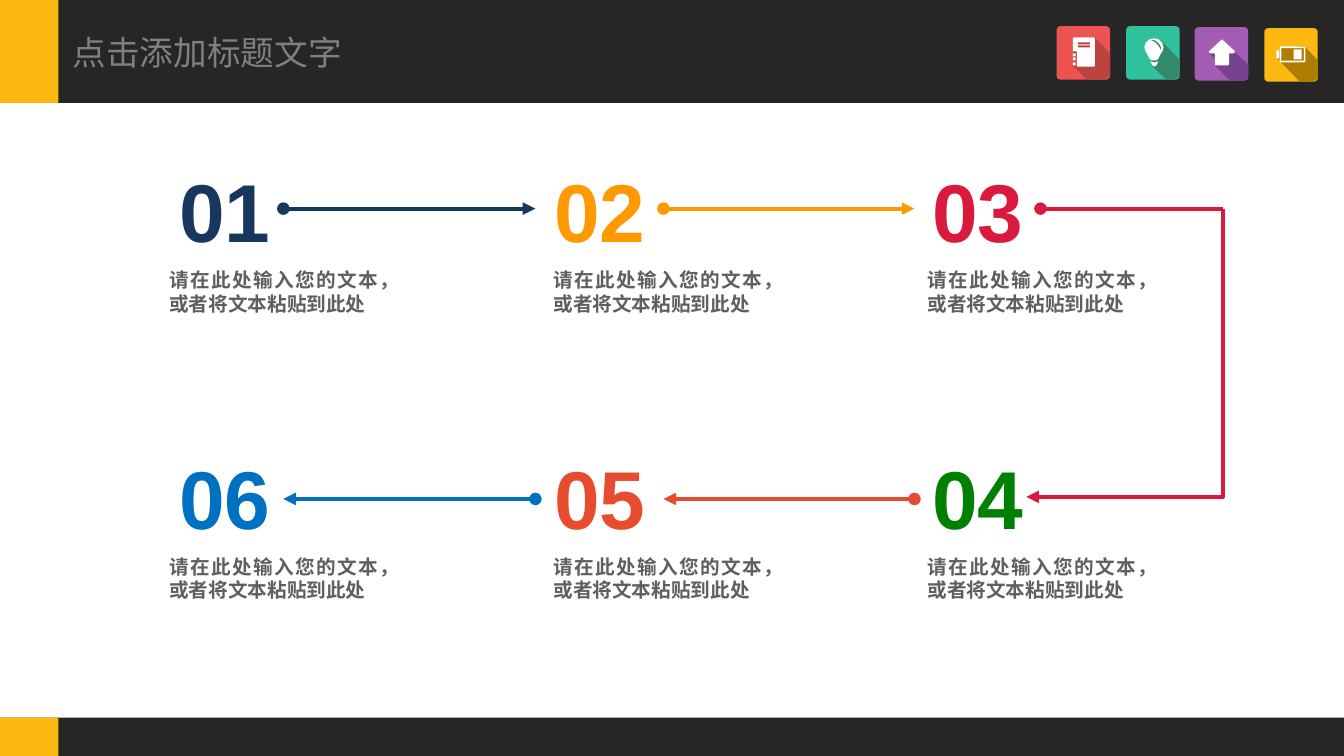
from lxml.etree import SubElement
from pptx import Presentation
from pptx.dml.color import RGBColor
from pptx.enum.shapes import MSO_CONNECTOR as LINK, MSO_SHAPE as FORM
from pptx.enum.text import MSO_ANCHOR as ANCHOR, MSO_AUTO_SIZE as FIT, PP_ALIGN as ALIGN
from pptx.oxml.ns import qn
from pptx.util import Inches, Pt

HUES = {
    "dark": "262626", "gold": "FDB812", "white": "FFFFFF",
    "title": "808080", "body": "5F5F5F",
    "red": "EC5451", "red_low": "BD4341", "teal": "2FC19C", "teal_low": "348A68",
    "plum": "A45BB4", "plum_low": "76428F", "gold_low": "AF7D01",
    "01": "17375E", "02": "FF9900", "03": "DA193F",
    "04": "008000", "05": "E74C2E", "06": "0070C0",
}
BODY = "请在此处输入您的文本，或者将文本粘贴到此处"
STEPS = [["01", "02", "03"], ["06", "05", "04"]]
NUM_X = [1.77, 5.49, 9.24]
BODY_X = [1.58, 5.39, 9.1]
NUM_Y = [1.59, 4.44]
BODY_Y = [2.61, 5.45]
TOP, LOW = 2.07, 4.95
ARROWS = [
    ("01", 2.81, 5.31, TOP, True), ("02", 6.58, 9.07, TOP, True),
    ("03", 10.32, 12.13, TOP, False),
    ("05", 9.07, 6.58, LOW, True), ("06", 5.31, 2.81, LOW, True),
]


def hue(key):
    return RGBColor.from_string(HUES[key])


def paint(shape, key):
    shape.shadow.inherit = False
    shape.fill.solid()
    shape.fill.fore_color.rgb = hue(key)
    shape.line.fill.background()
    return shape


def block(slide, key, x, y, w, h, form=FORM.RECTANGLE):
    box = [Inches(v) for v in (x, y, w, h)]
    return paint(slide.shapes.add_shape(form, *box), key)


def poly(slide, key, points):
    spots = [(Inches(x), Inches(y)) for x, y in points]
    pen = slide.shapes.build_freeform(*spots[0])
    pen.add_line_segments(spots[1:], close=True)
    return paint(pen.convert_to_shape(), key)


def tile(slide, key, x, y, cast):
    base = block(slide, key, x, y, 0.53, 0.53, FORM.ROUNDED_RECTANGLE)
    base.adjustments[0] = 0.07
    poly(slide, key + "_low", cast)


def style(frame, size, key, bold, align):
    frame.auto_size = FIT.NONE
    para = frame.paragraphs[0]
    para.alignment = align
    font = para.runs[0].font
    font.name, font.size, font.bold = "Arial", Pt(size), bold
    font.color.rgb = hue(key)
    return para


def label(slide, text, x, y, w, h):
    box = slide.shapes.add_textbox(*[Inches(v) for v in (x, y, w, h)])
    box.text_frame.text = text
    return box.text_frame


def number(slide, text, x, y):
    frame = label(slide, text, x, y, 0.92, 0.99)
    frame.margin_left = frame.margin_right = 0
    frame.margin_top = frame.margin_bottom = 0
    frame.word_wrap = False
    style(frame, 58.6, text, True, ALIGN.CENTER).space_before = Pt(5.5)


def note(slide, x, y):
    frame = label(slide, BODY, x, y, 2.28, 0.57)
    frame.word_wrap = True
    frame.vertical_anchor = ANCHOR.MIDDLE
    style(frame, 14, "body", True, ALIGN.JUSTIFY)


def link(slide, key, start, end, head=None, tail=None, kind=LINK.STRAIGHT):
    ends = [Inches(v) for v in (*start, *end)]
    wire = slide.shapes.add_connector(kind, *ends)
    wire.line.color.rgb = hue(key)
    wire.line.width = Pt(3)
    line = wire.line._get_or_add_ln()
    for tag, tip in (("a:headEnd", head), ("a:tailEnd", tail)):
        if tip:
            SubElement(line, qn(tag), type=tip)
    SubElement(wire._element.spPr, qn("a:effectLst"))
    return wire


def turn(slide):
    wire = link(slide, "03", (12.13, TOP), (10.18, 4.93),
                tail="triangle", kind=LINK.ELBOW)
    guide = wire._element.spPr.find(qn("a:prstGeom")).get_or_add_avLst()
    SubElement(guide, qn("a:gd"), name="adj1", fmla="val 0")


def bars(slide):
    for y, h in ((0, 1.02), (7.12, 0.38)):
        block(slide, "dark", 0, y, 13.33, h)
        block(slide, "gold", 0, y, 0.58, h)


def book(slide):
    tile(slide, "red", 10.48, 0.26, [
        (10.86, 0.37), (11.01, 0.53), (11.01, 0.75), (10.97, 0.79),
        (10.78, 0.79), (10.64, 0.65), (10.64, 0.5), (10.66, 0.38)])
    poly(slide, "white", [
        (10.65, 0.37), (10.85, 0.37), (10.86, 0.38), (10.86, 0.65),
        (10.85, 0.66), (10.68, 0.66), (10.68, 0.51), (10.64, 0.51),
        (10.64, 0.38)])
    for y in (0.42, 0.45):
        block(slide, "red_low", 10.69, y, 0.12, 0.02)
    for y in (0.53, 0.57, 0.62):
        block(slide, "white", 10.64, y, 0.03, 0.03)


def bulb(slide):
    tile(slide, "teal", 11.17, 0.26, [
        (11.43, 0.39), (11.51, 0.4), (11.7, 0.59), (11.7, 0.75),
        (11.66, 0.79), (11.57, 0.79), (11.42, 0.65), (11.44, 0.62),
        (11.4, 0.59), (11.37, 0.43)])
    block(slide, "white", 11.35, 0.38, 0.19, 0.18, FORM.OVAL)
    poly(slide, "white", [
        (11.37, 0.52), (11.52, 0.52), (11.49, 0.58), (11.47, 0.6),
        (11.42, 0.6), (11.4, 0.58)])
    poly(slide, "white", [
        (11.41, 0.61), (11.45, 0.62), (11.49, 0.61), (11.47, 0.65),
        (11.45, 0.66), (11.43, 0.65)])
    shine = block(slide, "teal_low", 11.46, 0.37, 0.03, 0.13, FORM.MOON)
    shine.rotation = 135


def rise(slide):
    tile(slide, "plum", 11.85, 0.27, [
        (12.24, 0.51), (12.38, 0.64), (12.38, 0.76), (12.34, 0.8),
        (12.2, 0.8), (12.05, 0.65), (12.11, 0.64), (11.99, 0.53)])
    poly(slide, "white", [
        (12.11, 0.4), (12.12, 0.39), (12.13, 0.4), (12.25, 0.51),
        (12.24, 0.53), (12.19, 0.53), (12.19, 0.64), (12.18, 0.65),
        (12.06, 0.65), (12.05, 0.64), (12.05, 0.53), (12, 0.53),
        (11.99, 0.51)])


def cell(slide):
    tile(slide, "gold", 12.54, 0.28, [
        (12.94, 0.46), (13.07, 0.6), (13.07, 0.77), (13.03, 0.81),
        (12.89, 0.81), (12.66, 0.57), (12.7, 0.47)])
    case = block(slide, "white", 12.7, 0.47, 0.24, 0.14, FORM.ROUNDED_RECTANGLE)
    case.adjustments[0] = 0.07
    case.fill.background()
    case.line.color.rgb = hue("white")
    case.line.width = Pt(1.2)
    block(slide, "white", 12.66, 0.5, 0.03, 0.08)
    block(slide, "white", 12.83, 0.49, 0.08, 0.1)


def head(slide):
    title = slide.shapes.title
    title.left, title.top = Inches(0.61), Inches(0.27)
    title.width, title.height = Inches(2.89), Inches(0.5)
    frame = title.text_frame
    frame.text = "点击添加标题文字"
    frame.word_wrap = False
    frame.vertical_anchor = ANCHOR.TOP
    style(frame, 24, "title", False, ALIGN.CENTER)
    slide.shapes._spTree.append(title._element)


def main():
    deck = Presentation()
    deck.slide_width, deck.slide_height = Inches(13.33), Inches(7.5)
    slide = deck.slides.add_slide(deck.slide_layouts[5])
    bars(slide)
    for icon in (book, bulb, rise, cell):
        icon(slide)
    for row, num_y, body_y in zip(STEPS, NUM_Y, BODY_Y):
        for step, num_x, body_x in zip(row, NUM_X, BODY_X):
            number(slide, step, num_x, num_y)
            note(slide, body_x, body_y)
    for key, start, end, y, tip in ARROWS:
        link(slide, key, (start, y), (end, y), "oval", "triangle" if tip else None)
    turn(slide)
    head(slide)
    deck.save("out.pptx")


if __name__ == "__main__":
    main()
